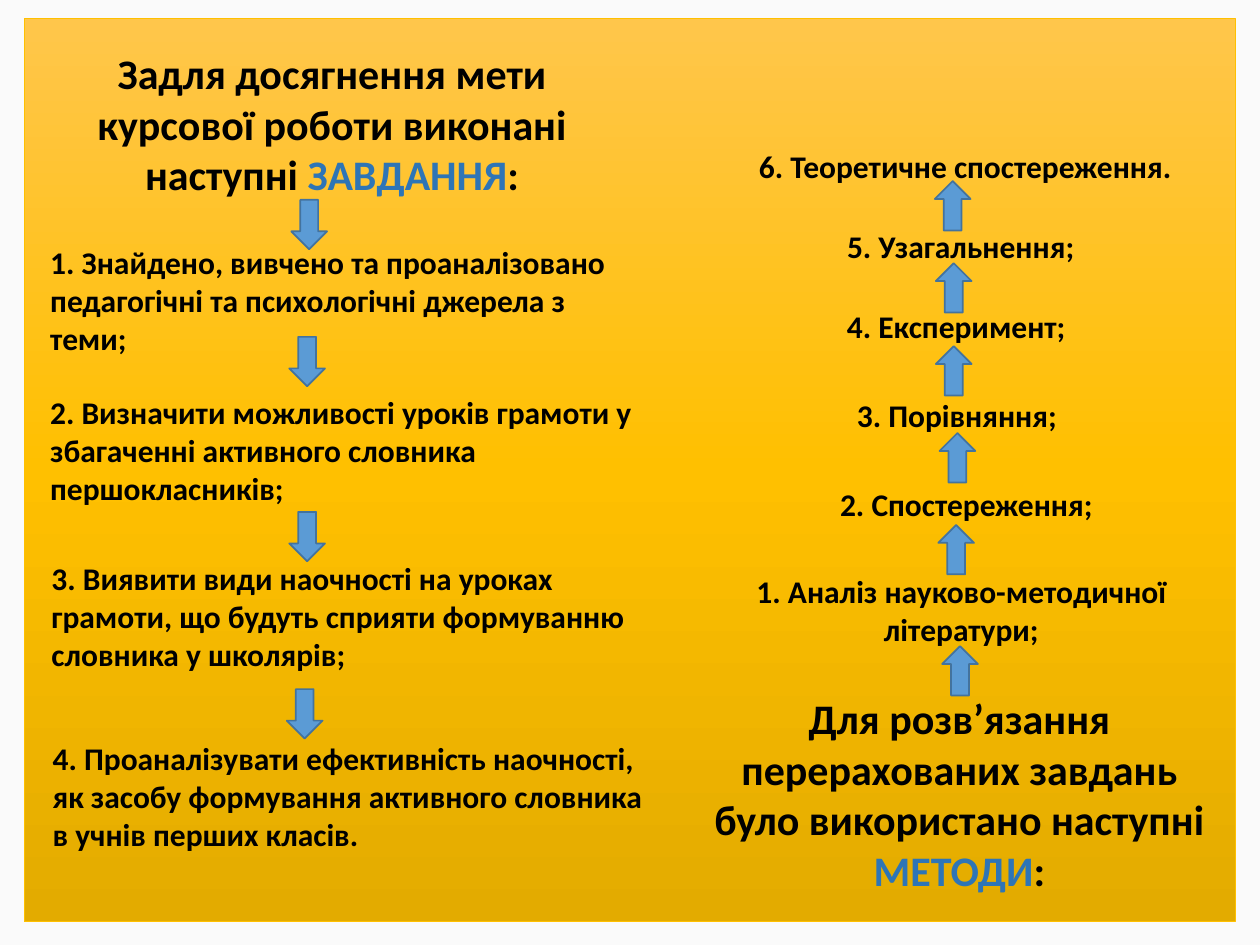
from copy import deepcopy
from dataclasses import dataclass

from lxml.etree import SubElement
from pptx import Presentation
from pptx.dml.color import RGBColor
from pptx.enum.shapes import MSO_SHAPE
from pptx.enum.text import MSO_AUTO_SIZE, PP_ALIGN
from pptx.oxml.ns import qn
from pptx.util import Pt


@dataclass(frozen=True)
class Theme:
    font: str = "Calibri"
    heading_size: int = 24
    item_size: int = 18
    text: str = "000000"
    accent: str = "2E75B6"
    page: str = "FAFAFA"
    panel_line: str = "FFC000"
    panel_stops: tuple = ((0, "FFC64B"), (0.5, "FFC000"), (1, "E3AB00"))
    arrow_fill: str = "5B9BD5"
    arrow_line: str = "43739E"


theme = Theme()

deck = Presentation()
deck.slide_width, deck.slide_height = Pt(720), Pt(540)
page = deck.slides.add_slide(deck.slide_layouts[6])
page.background.fill.solid()
page.background.fill.fore_color.rgb = RGBColor.from_string(theme.page)


def add_text(frame, spans, size, alignment):
    """Add a bold text box; spans are (text, colour) pairs, each outlined in its colour."""
    box = page.shapes.add_textbox(*map(Pt, frame))
    box.text_frame.word_wrap = True
    box.text_frame.auto_size = MSO_AUTO_SIZE.SHAPE_TO_FIT_TEXT
    para = box.text_frame.paragraphs[0]
    para.alignment = alignment
    for text, colour in spans:
        span = para.add_run()
        span.text = text
        outline = SubElement(span.font._element, qn("a:ln"), w=str(Pt(0.83)))
        outline_fill = SubElement(outline, qn("a:solidFill"))
        SubElement(outline_fill, qn("a:srgbClr"), val=colour)
        span.font.name = theme.font
        span.font.size = Pt(size)
        span.font.bold = True
        span.font.color.rgb = RGBColor.from_string(colour)


def add_arrow(left, top, rotation):
    arrow = page.shapes.add_shape(MSO_SHAPE.UP_ARROW, Pt(left), Pt(top), Pt(20.4), Pt(28.2))
    arrow.rotation = rotation
    arrow.shadow.inherit = False
    arrow.fill.solid()
    arrow.fill.fore_color.rgb = RGBColor.from_string(theme.arrow_fill)
    arrow.line.color.rgb = RGBColor.from_string(theme.arrow_line)
    arrow.line.width = Pt(1)


# Gradient panel behind both columns
panel = page.shapes.add_shape(MSO_SHAPE.RECTANGLE, Pt(13.8), Pt(10.5), Pt(692), Pt(516.2))
panel.shadow.inherit = False
panel.line.color.rgb = RGBColor.from_string(theme.panel_line)
panel.line.width = Pt(0.5)
panel.fill.gradient()
panel.fill.gradient_angle = 270
stop_list = panel._element.spPr.find(".//" + qn("a:gsLst"))
stop_list.insert(1, deepcopy(stop_list[0]))
for stop, (position, colour) in zip(panel.fill.gradient_stops, theme.panel_stops):
    stop.position = position
    stop.color.rgb = RGBColor.from_string(colour)

# Column headings
headings = [
    ((18.7, 23.8, 342, 94.5),
     "Задля досягнення мети курсової роботи виконані наступні ", "ЗАВДАННЯ"),
    ((397.4, 392.4, 301.7, 123.8),
     "Для розв’язання перерахованих завдань було використано наступні ", "МЕТОДИ"),
]
for frame, lead, keyword in headings:
    spans = [(lead, theme.text), (keyword, theme.accent), (":", theme.text)]
    add_text(frame, spans, theme.heading_size, PP_ALIGN.CENTER)

# Tasks run down the left column: left, top, width, text
tasks = [
    (21.6, 135.4, 353.5,
     "1. Знайдено, вивчено та проаналізовано педагогічні та психологічні джерела з теми;"),
    (21.6, 221, 352.8,
     "2. Визначити можливості уроків грамоти у збагаченні активного словника першокласників;"),
    (22.3, 316.1, 351.4,
     "3. Виявити види наочності на уроках грамоти, що будуть сприяти формуванню "
     "словника у школярів;"),
    (23, 419, 351.4,
     "4. Проаналізувати ефективність наочності, як засобу формування активного словника "
     "в учнів перших класів."),
]
for left, top, width, text in tasks:
    add_text((left, top, width, 72.7), [(text, theme.text)], theme.item_size, PP_ALIGN.LEFT)

# Methods climb the right column: left, top, width, height, text
methods = [
    (409.7, 323.3, 279.4, 50.9, "1. Аналіз науково-методичної літератури;"),
    (439.2, 273.6, 226, 29.1, "2. Спостереження;"),
    (447.8, 222.5, 198, 29.1, "3. Порівняння;"),
    (414.7, 172.1, 263.5, 29.1, "4. Експеримент;"),
    (443.5, 126, 211, 29.1, "5. Узагальнення;"),
    (423.4, 80.6, 256.3, 29.1, "6. Теоретичне спостереження."),
]
for *frame, text in methods:
    add_text(frame, [(text, theme.text)], theme.item_size, PP_ALIGN.CENTER)

method_arrows = [(538.4, 369.2), (536.2, 300), (536.9, 247.5),
                 (534.8, 197.8), (534.8, 150.4), (534.2, 103.5)]
task_arrows = [(166.5, 114.2), (165.3, 192.5), (165.3, 292.5), (163.9, 393.8)]
for arrows, rotation in ((method_arrows, 0), (task_arrows, 180)):
    for left, top in arrows:
        add_arrow(left, top, rotation)

deck.save("out.pptx")
